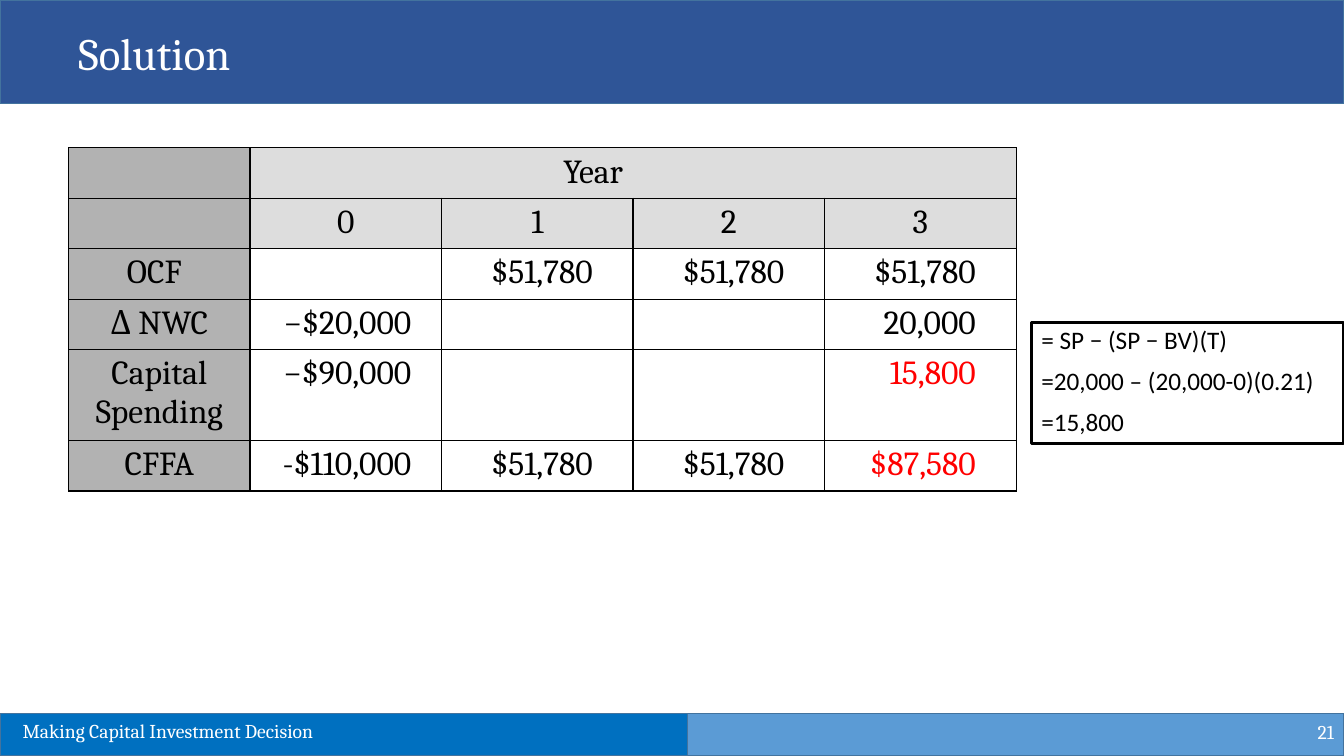
from dataclasses import dataclass

from lxml import etree
from pptx import Presentation
from pptx import util as u
from pptx.dml import color
from pptx.enum import shapes, text
from pptx.oxml import ns

Pt = u.Pt
LEFT, CENTER, RIGHT = text.PP_ALIGN.LEFT, text.PP_ALIGN.CENTER, text.PP_ALIGN.RIGHT


@dataclass(frozen=True)
class Theme:
    serif: str = "Cambria"
    sans: str = "Calibri"
    title_size: int = 32
    table_size: int = 24
    note_size: int = 18
    footer_size: int = 14
    white: str = "FFFFFF"
    black: str = "000000"
    red: str = "FF0000"
    title_band: str = "2F5597"
    footer_dark: str = "0070C0"
    footer_light: str = "5B9BD5"
    band_line: str = "43739E"
    label_fill: str = "B2B2B2"
    year_fill: str = "DDDDDD"


THEME = Theme()
WIDTH, HEIGHT = 960, 540

COLUMNS = [129.6] + [136.8] * 4
ROWS = [36, 36, 36, 36, 65, 36]
CASH_FLOWS = [
    ["", "", "Year", "", ""],
    ["", "0", "1", "2", "3"],
    ["OCF", "", "$51,780", "$51,780", "$51,780"],
    ["Δ NWC", "−$20,000", "", "", "20,000"],
    ["Capital Spending", "−$90,000", "", "", "15,800"],
    ["CFFA", "-$110,000", "$51,780", "$51,780", "$87,580"],
]
HIGHLIGHTS = {(4, 4), (5, 4)}
SALVAGE_STEPS = ["= SP − (SP − BV)(T)", "=20,000 – (20,000-0)(0.21)", "=15,800"]


def rgb(value):
    return color.RGBColor.from_string(value)


def write_text(frame, lines, *, size, fill=THEME.black, font=THEME.serif, align=LEFT,
               anchor=text.MSO_ANCHOR.TOP, line_spacing=1.0, space_before=0):
    frame.word_wrap = True
    frame.vertical_anchor = anchor
    for index, line in enumerate(lines):
        paragraph = frame.paragraphs[0] if index == 0 else frame.add_paragraph()
        paragraph.alignment = align
        paragraph.line_spacing = line_spacing
        paragraph.space_before = Pt(space_before)
        run = paragraph.add_run()
        run.text = line
        run.font.size = Pt(size)
        run.font.name = font
        run.font.color.rgb = rgb(fill)


def add_label(slide, box, line, **formatting):
    label = slide.shapes.add_textbox(*map(Pt, box))
    write_text(label.text_frame, [line], **formatting)


def add_rectangle(slide, box, *, fill=None, line=THEME.band_line, line_width=1):
    shape = slide.shapes.add_shape(shapes.MSO_SHAPE.RECTANGLE, *map(Pt, box))
    shape.shadow.inherit = False
    if fill:
        shape.fill.solid()
        shape.fill.fore_color.rgb = rgb(fill)
    else:
        shape.fill.background()
    shape.line.color.rgb = rgb(line)
    shape.line.width = Pt(line_width)
    return shape


def add_title(slide, box, title):
    left, top, width, height = box
    add_rectangle(slide, box, fill=THEME.title_band)
    add_label(slide, (left + 49, top + 15, width - 90, 46), title,
              size=THEME.title_size, fill=THEME.white)


def add_footer(slide, box, topic, number):
    left, top, width, height = box
    split = 491
    add_rectangle(slide, (left, top, split, height), fill=THEME.footer_dark)
    add_rectangle(slide, (left + split, top, width - split, height), fill=THEME.footer_light)
    add_label(slide, (left + width - 216, top - 1.5, 216, 29), number, size=THEME.footer_size,
              fill=THEME.white, align=RIGHT, anchor=text.MSO_ANCHOR.MIDDLE)
    add_label(slide, (left + 9, top + 0.5, 399, 24), topic,
              size=THEME.footer_size, fill=THEME.white)


def set_borders(cell, hidden_sides):
    properties = cell._tc.get_or_add_tcPr()
    for index, side in enumerate("LRTB"):
        border = etree.Element(ns.qn(f"a:ln{side}"), w=str(Pt(1)))
        if side in hidden_sides:
            etree.SubElement(border, ns.qn("a:noFill"))
        else:
            solid = etree.SubElement(border, ns.qn("a:solidFill"))
            etree.SubElement(solid, ns.qn("a:srgbClr"), val=THEME.black)
        properties.insert(index, border)


def fill_cell(cell, row, column, value):
    background = THEME.label_fill if column == 0 else THEME.year_fill if row < 2 else None
    if background:
        cell.fill.solid()
        cell.fill.fore_color.rgb = rgb(background)
    else:
        cell.fill.background()
    hidden_sides = ""
    if row == 0 and column > 0:
        hidden_sides = ("L" if column > 1 else "") + ("R" if column < 4 else "")
    set_borders(cell, hidden_sides)
    if row > 1 and column > 0:
        cell.margin_right = Pt(21.6 if column == 1 else 28.8)
    elif value == "OCF":
        cell.margin_right = Pt(14.4)
    if value:
        centered = column == 0 or row == 1
        write_text(cell.text_frame, [value], size=THEME.table_size,
                   align=CENTER if centered else RIGHT,
                   fill=THEME.red if (row, column) in HIGHLIGHTS else THEME.black)


def add_cash_flow_table(slide, left, top):
    frame = slide.shapes.add_table(len(ROWS), len(COLUMNS), Pt(left), Pt(top),
                                   Pt(sum(COLUMNS)), Pt(sum(ROWS)))
    table = frame.table
    table.first_row = table.horz_banding = False
    for column, width in zip(table.columns, COLUMNS):
        column.width = Pt(width)
    for row, height in zip(table.rows, ROWS):
        row.height = Pt(height)
    for row, values in enumerate(CASH_FLOWS):
        for column, value in enumerate(values):
            fill_cell(table.cell(row, column), row, column, value)


def add_salvage_note(slide, box):
    """Show how the after-tax salvage value is worked out."""
    note = add_rectangle(slide, box, line=THEME.black, line_width=2.25)
    write_text(note.text_frame, SALVAGE_STEPS, size=THEME.note_size, font=THEME.sans,
               line_spacing=0.9, space_before=10)


def main():
    presentation = Presentation()
    presentation.slide_width, presentation.slide_height = Pt(WIDTH), Pt(HEIGHT)
    slide = presentation.slides.add_slide(presentation.slide_layouts[6])
    add_title(slide, (0, 0, WIDTH, 74), "Solution")
    add_footer(slide, (0, 509.5, WIDTH, 30.5), "Making Capital Investment Decision", "21")
    add_cash_flow_table(slide, 49, 105.6)
    add_salvage_note(slide, (736.8, 230.4, 223.2, 86.4))
    presentation.save("out.pptx")


if __name__ == "__main__":
    main()
